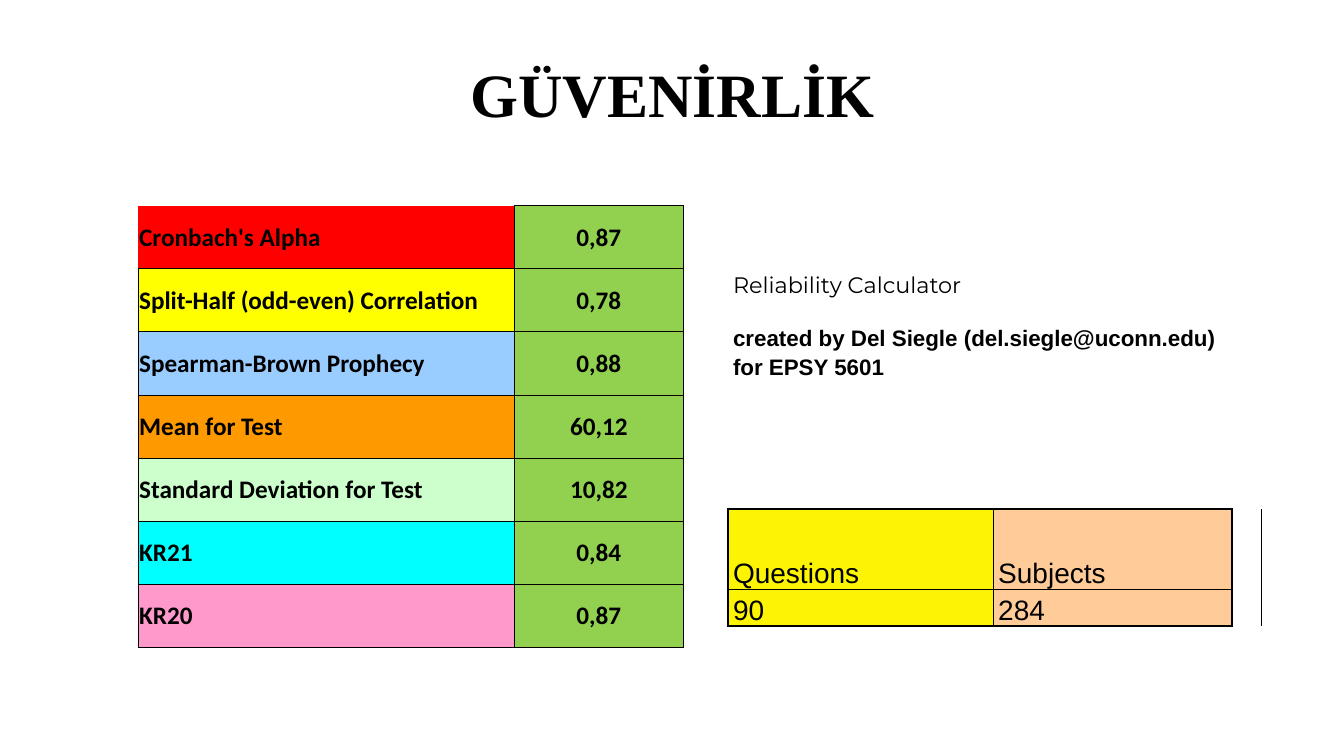
from dataclasses import dataclass

from lxml import etree
from pptx import Presentation
from pptx.dml.color import RGBColor
from pptx.enum.text import MSO_ANCHOR, PP_ALIGN
from pptx.oxml.ns import qn
from pptx.slide import Slide
from pptx.table import Table, _Cell
from pptx.text.text import _Paragraph
from pptx.util import Inches, Pt

MIDDLE = MSO_ANCHOR.MIDDLE
BOTTOM = MSO_ANCHOR.BOTTOM
LEFT = PP_ALIGN.LEFT
CENTER = PP_ALIGN.CENTER
BLACK = "000000"
GREEN = "92D050"
YELLOW = "FCF305"
PEACH = "FFCC99"
PLAIN_TABLE_STYLE = "{2D5ABB26-0587-4C30-8999-92F81FD0307C}"


@dataclass(frozen=True)
class Statistic:
    label: str
    value: str
    color: str


@dataclass(frozen=True)
class InfoCell:
    row: int
    column: int
    text: str = ""
    font: str = "Arial"
    size: int = 16
    bold: bool = False
    color: str = ""
    sides: str = ""


STATISTICS = [
    Statistic("Cronbach's Alpha", "0,87", "FF0000"),
    Statistic("Split-Half (odd-even) Correlation", "0,78", "FFFF00"),
    Statistic("Spearman-Brown Prophecy", "0,88", "99CCFF"),
    Statistic("Mean for Test", "60,12", "FF9900"),
    Statistic("Standard Deviation for Test", "10,82", "CCFFCC"),
    Statistic("KR21", "0,84", "00FFFF"),
    Statistic("KR20", "0,87", "FF99CC"),
]

INFO_CELLS = [
    InfoCell(0, 0, "Reliability Calculator", font="Montserrat"),
    InfoCell(1, 0, "created by Del Siegle (del.siegle@uconn.edu)\nfor EPSY 5601", bold=True),
    InfoCell(4, 0, sides="B"),
    InfoCell(4, 1, sides="B"),
    InfoCell(4, 2, sides="B"),
    InfoCell(5, 0, "Questions", size=20, color=YELLOW, sides="LRT"),
    InfoCell(5, 1, "Subjects", size=20, color=PEACH, sides="LRT"),
    InfoCell(5, 2, color=PEACH, sides="RT"),
    InfoCell(5, 3, sides="L"),
    InfoCell(6, 0, "90", size=20, color=YELLOW, sides="LRB"),
    InfoCell(6, 1, "284", size=20, color=PEACH, sides="LRB"),
    InfoCell(6, 2, color=PEACH, sides="RB"),
    InfoCell(6, 3, sides="L"),
]

INFO_MERGES = [(0, 0, 1), (0, 2, 3), (1, 0, 3)] + [(row, 1, 2) for row in range(2, 7)]


def rgb(color: str) -> RGBColor:
    return RGBColor.from_string(color)


def format_paragraph(
    paragraph: _Paragraph, font: str, size: int, bold: bool, alignment: PP_ALIGN = LEFT
) -> None:
    paragraph.alignment = alignment
    for run in paragraph.runs:
        run.font.name = font
        run.font.size = Pt(size)
        run.font.bold = bold
        run.font.color.rgb = rgb(BLACK)


def set_borders(cell: _Cell, sides: str, width: float) -> None:
    properties = cell._tc.get_or_add_tcPr()
    for side in sides:
        line = etree.SubElement(properties, qn(f"a:ln{side}"), w=str(Pt(width)))
        fill = etree.SubElement(line, qn("a:solidFill"))
        etree.SubElement(fill, qn("a:srgbClr"), val=BLACK)


def fill_cell(cell: _Cell, color: str) -> None:
    if color:
        cell.fill.solid()
        cell.fill.fore_color.rgb = rgb(color)
    else:
        cell.fill.background()


def set_margins(cell: _Cell, side: float, top: float) -> None:
    cell.margin_left = cell.margin_right = Inches(side)
    cell.margin_top = Inches(top)
    cell.margin_bottom = 0


def add_plain_table(
    slide: Slide, left: float, top: float, widths: list[float], heights: list[float]
) -> Table:
    frame = slide.shapes.add_table(
        len(heights), len(widths), Inches(left), Inches(top),
        Inches(sum(widths)), Inches(sum(heights)),
    )
    table = frame.table
    table.first_row = table.horz_banding = False
    table._tbl.tblPr.find(qn("a:tableStyleId")).text = PLAIN_TABLE_STYLE
    for column, width in zip(table.columns, widths):
        column.width = Inches(width)
    for row, height in zip(table.rows, heights):
        row.height = Inches(height)
    return table


def add_title(slide: Slide, text: str) -> None:
    title = slide.shapes.title
    title.left, title.top = Inches(0.67), Inches(0.3)
    title.width, title.height = Inches(12), Inches(1.25)
    title.text_frame.text = text
    title.text_frame.vertical_anchor = MIDDLE
    format_paragraph(title.text_frame.paragraphs[0], "Times New Roman", 44, True, CENTER)


def add_statistics_table(slide: Slide) -> None:
    table = add_plain_table(slide, 1.37, 2.04, [3.73, 1.68], [4.38 / 7] * 7)
    for row, statistic in enumerate(STATISTICS):
        label_sides = "LRTB" if row else "RB"
        columns = [
            (statistic.label, statistic.color, LEFT, label_sides),
            (statistic.value, GREEN, CENTER, "LRTB"),
        ]
        for column, (text, color, alignment, sides) in enumerate(columns):
            cell = table.cell(row, column)
            cell.text_frame.text = text
            cell.vertical_anchor = MIDDLE
            set_margins(cell, 0.01, 0.01)
            format_paragraph(cell.text_frame.paragraphs[0], "Calibri", 18, True, alignment)
            set_borders(cell, sides, 0.5)
            fill_cell(cell, color)


def add_info_table(slide: Slide) -> None:
    table = add_plain_table(
        slide, 7.22, 2.38, [2.63, 1.14, 1.23, 0.29], [0.59, 0.8, 0.3, 0.3, 0.67, 0.8, 0.36]
    )
    for row, first, last in INFO_MERGES:
        table.cell(row, first).merge(table.cell(row, last))
    for cell in table.iter_cells():
        set_margins(cell, 0.05, 0)
    for info in INFO_CELLS:
        cell = table.cell(info.row, info.column)
        cell.vertical_anchor = BOTTOM
        set_borders(cell, info.sides, 1)
        fill_cell(cell, info.color)
        if info.text:
            cell.text_frame.text = info.text
            for paragraph in cell.text_frame.paragraphs:
                paragraph.line_spacing = 1.15
                format_paragraph(paragraph, info.font, info.size, info.bold)


def main() -> None:
    presentation = Presentation()
    presentation.slide_width = Inches(13.33)
    presentation.slide_height = Inches(7.5)
    slide = presentation.slides.add_slide(presentation.slide_layouts[5])
    add_title(slide, "GÜVENİRLİK")
    add_statistics_table(slide)
    add_info_table(slide)
    presentation.save("out.pptx")


if __name__ == "__main__":
    main()
